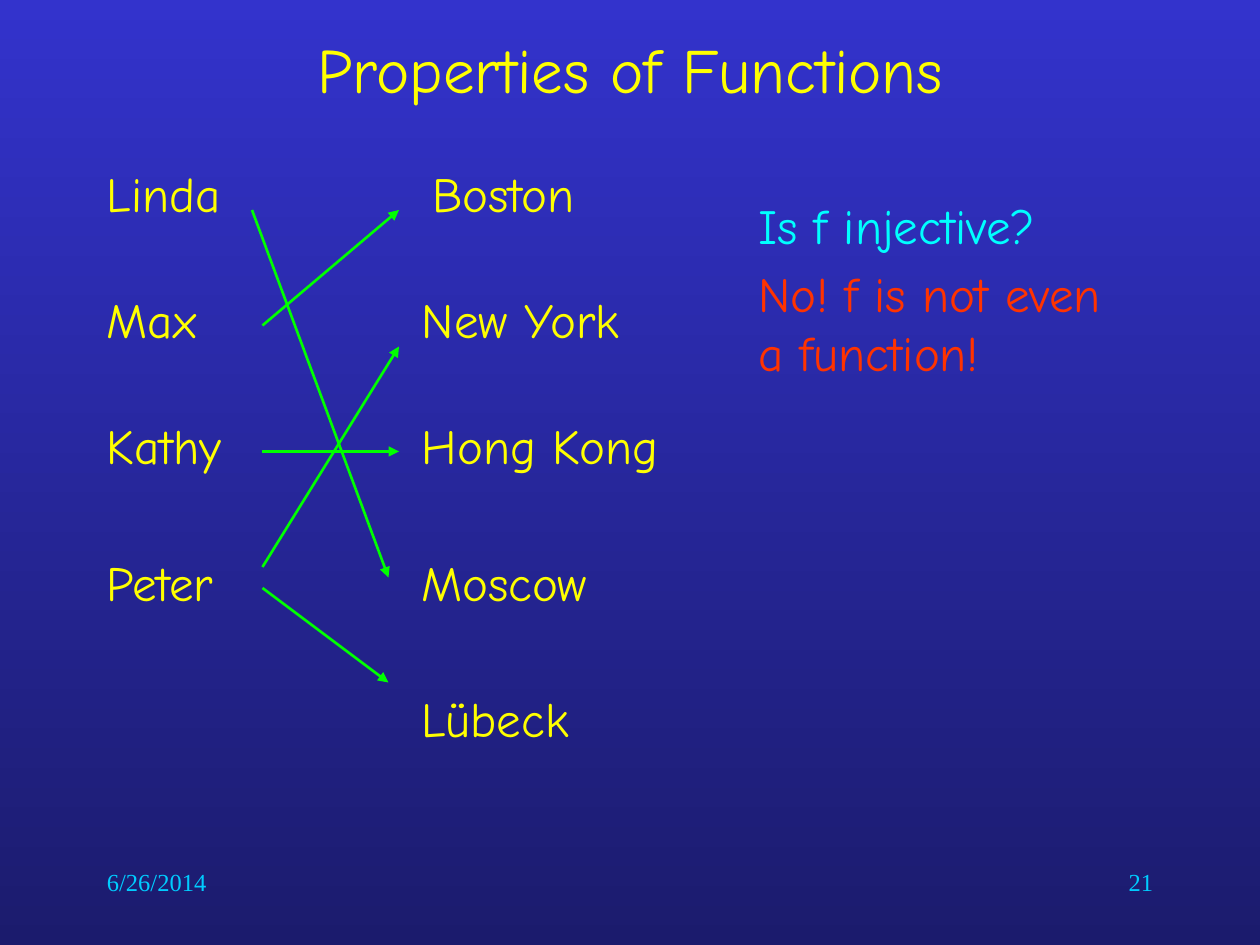
from lxml import etree
from pptx import Presentation
from pptx.dml.color import RGBColor
from pptx.enum.shapes import MSO_CONNECTOR
from pptx.enum.text import MSO_ANCHOR, MSO_AUTO_SIZE, PP_ALIGN
from pptx.oxml.ns import qn
from pptx.util import Pt

PX = 9525  # EMU, at 96 px to the inch
STRAIGHT = MSO_CONNECTOR.STRAIGHT
LEFT, CENTER, RIGHT = PP_ALIGN.LEFT, PP_ALIGN.CENTER, PP_ALIGN.RIGHT

BLUE = RGBColor(0x33, 0x33, 0xCC)
NAVY = RGBColor(0x1B, 0x1B, 0x6D)
YELLOW = RGBColor(0xFF, 0xFF, 0x00)
CYAN = RGBColor(0x00, 0xFF, 0xFF)
SKY = RGBColor(0x00, 0xCC, 0xFF)
RED = RGBColor(0xFF, 0x33, 0x00)
GREEN = RGBColor(0x00, 0xFF, 0x00)

HAND_FONT = "Comic Neue"
FOOTER_FONT = "Times New Roman"

ROWS = [120, 216, 312, 416, 520]
PEOPLE = ["Linda", "Max", "Kathy", "Peter"]
CITIES = [
    ("Boston", 320, 192),
    ("New York", 312, 192),
    ("Hong Kong", 312, 216),
    ("Moscow", 312, 192),
    ("Lübeck", 312, 192),
]
ARROWS = [
    (192, 160, 296, 440),  # Linda to Moscow
    (200, 248, 304, 160),  # Max to Boston
    (200, 344, 304, 344),  # Kathy to Hong Kong
    (200, 448, 296, 520),  # Peter to Lübeck
    (200, 432, 304, 264),  # Peter to New York
]


def px(*lengths):
    return [length * PX for length in lengths]


def place(shape, left, top, width, height):
    shape.left, shape.top, shape.width, shape.height = px(left, top, width, height)


def format_paragraph(paragraph, size, color, font_name=HAND_FONT, align=LEFT):
    paragraph.alignment = align
    paragraph.font.size = Pt(size)
    paragraph.font.name = font_name
    paragraph.font.color.rgb = color


def paint_background(slide):
    fill = slide.background.fill
    fill.gradient()
    fill.gradient_angle = 270
    for stop, color, position in zip(fill.gradient_stops, (BLUE, NAVY), (0, 1)):
        stop.color.rgb = color
        stop.position = position


def fill_title(slide, text):
    title = slide.shapes.title
    place(title, 72, 16, 816, 72)
    frame = title.text_frame
    frame.text = text
    frame.auto_size = MSO_AUTO_SIZE.NONE
    frame.vertical_anchor = MSO_ANCHOR.MIDDLE
    format_paragraph(frame.paragraphs[0], 36, YELLOW, align=CENTER)


def fill_body(slide, lines):
    """Fill the body with unbulleted (text, color) paragraphs."""
    body = slide.placeholders[1]
    place(body, 568, 144, 352, 456)
    frame = body.text_frame
    frame.text = "\n".join(text for text, _ in lines)
    frame.auto_size = MSO_AUTO_SIZE.NONE
    for paragraph, (_, color) in zip(frame.paragraphs, lines):
        format_paragraph(paragraph, 28, color)
        paragraph.space_before = Pt(5.6)
        properties = paragraph._p.get_or_add_pPr()
        properties.set("marL", "0")
        properties.set("indent", "0")
        bullet = etree.Element(qn("a:buNone"))
        properties.find(qn("a:defRPr")).addprevious(bullet)


def add_text(slide, text, box, size, color, font_name=HAND_FONT, align=LEFT):
    frame = slide.shapes.add_textbox(*px(*box)).text_frame
    frame.word_wrap = True
    frame.text = text
    format_paragraph(frame.paragraphs[0], size, color, font_name, align)


def add_arrow(slide, *ends):
    arrow = slide.shapes.add_connector(STRAIGHT, *px(*ends))
    arrow.line.color.rgb = GREEN
    arrow.line.width = Pt(1.5)
    etree.SubElement(arrow.line._get_or_add_ln(), qn("a:tailEnd"), type="triangle")
    etree.SubElement(arrow._element.spPr, qn("a:effectLst"))


def main():
    presentation = Presentation()
    presentation.slide_width, presentation.slide_height = px(960, 720)
    slide = presentation.slides.add_slide(presentation.slide_layouts[1])

    paint_background(slide)
    fill_title(slide, "Properties of Functions")
    fill_body(slide, [
        ("Is f injective?", CYAN),
        ("No! f is not even\va function!", RED),
    ])
    for name, top in zip(PEOPLE, ROWS):
        add_text(slide, name, (72, top, 192, 55), 28, YELLOW)
    for (name, left, width), top in zip(CITIES, ROWS):
        add_text(slide, name, (left, top, width, 55), 28, YELLOW)
    for ends in ARROWS:
        add_arrow(slide, *ends)
    add_text(slide, "6/26/2014", (72, 656, 200, 48), 14, SKY, FOOTER_FONT)
    add_text(slide, "21", (688, 656, 200, 48), 14, SKY, FOOTER_FONT, RIGHT)

    presentation.save("out.pptx")


if __name__ == "__main__":
    main()
